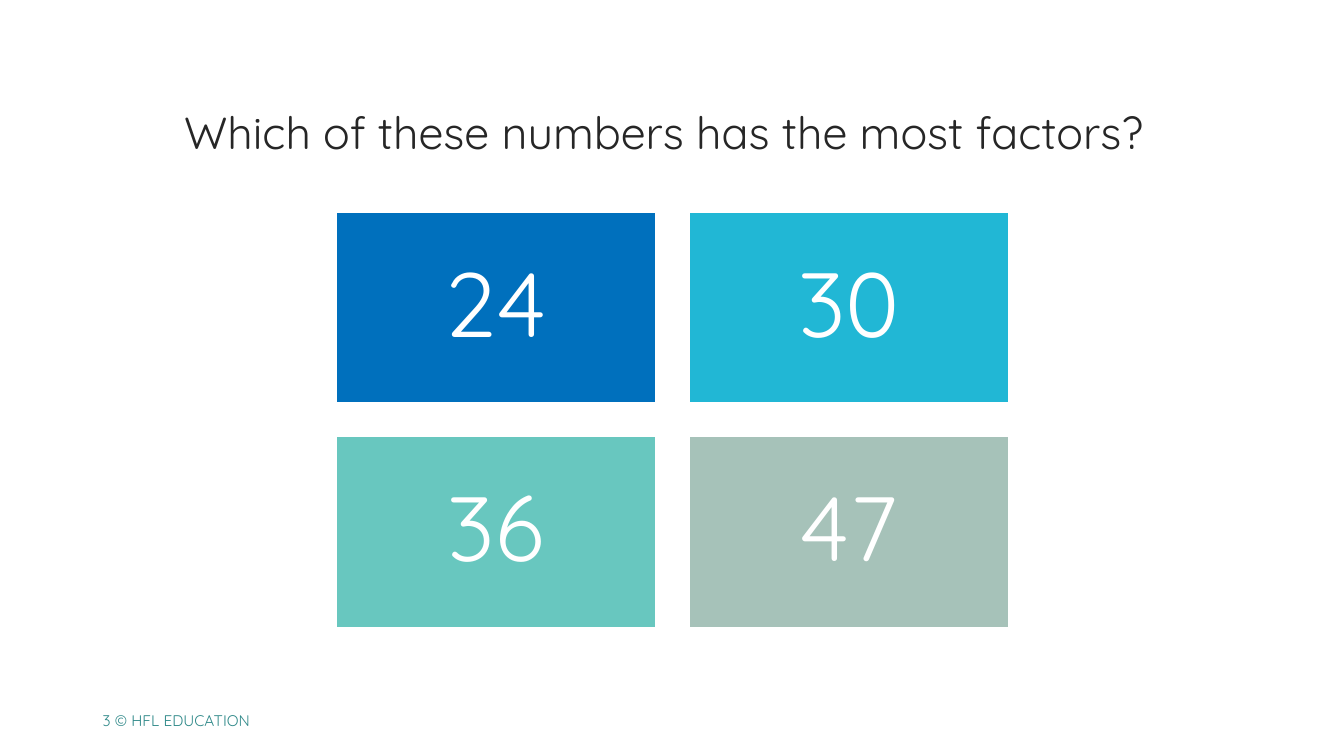
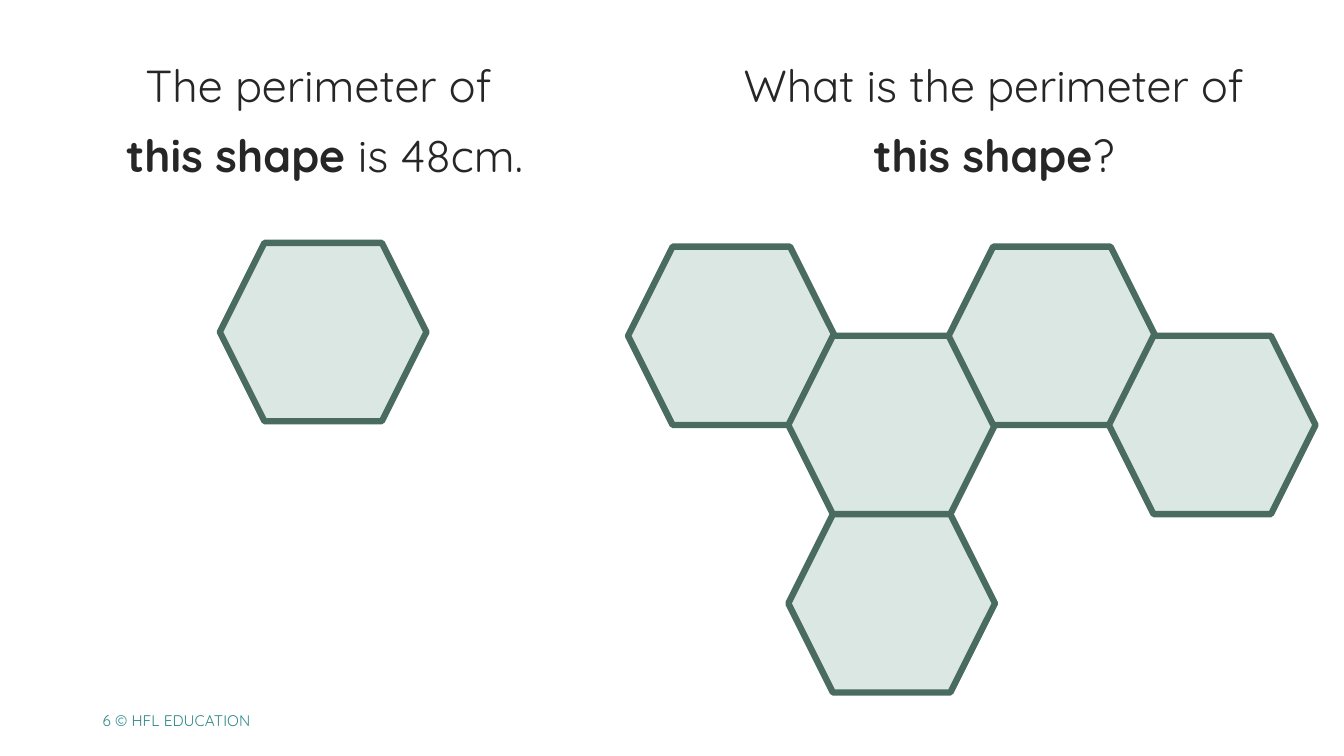
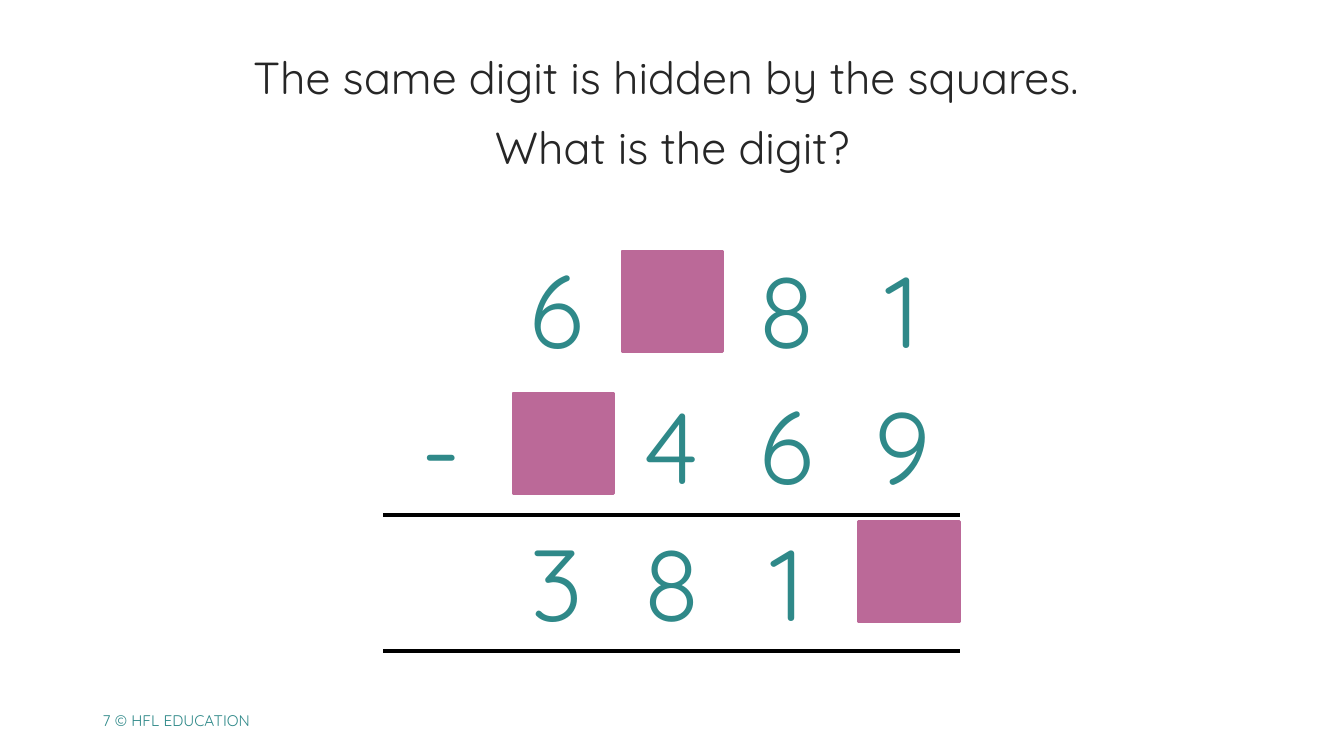
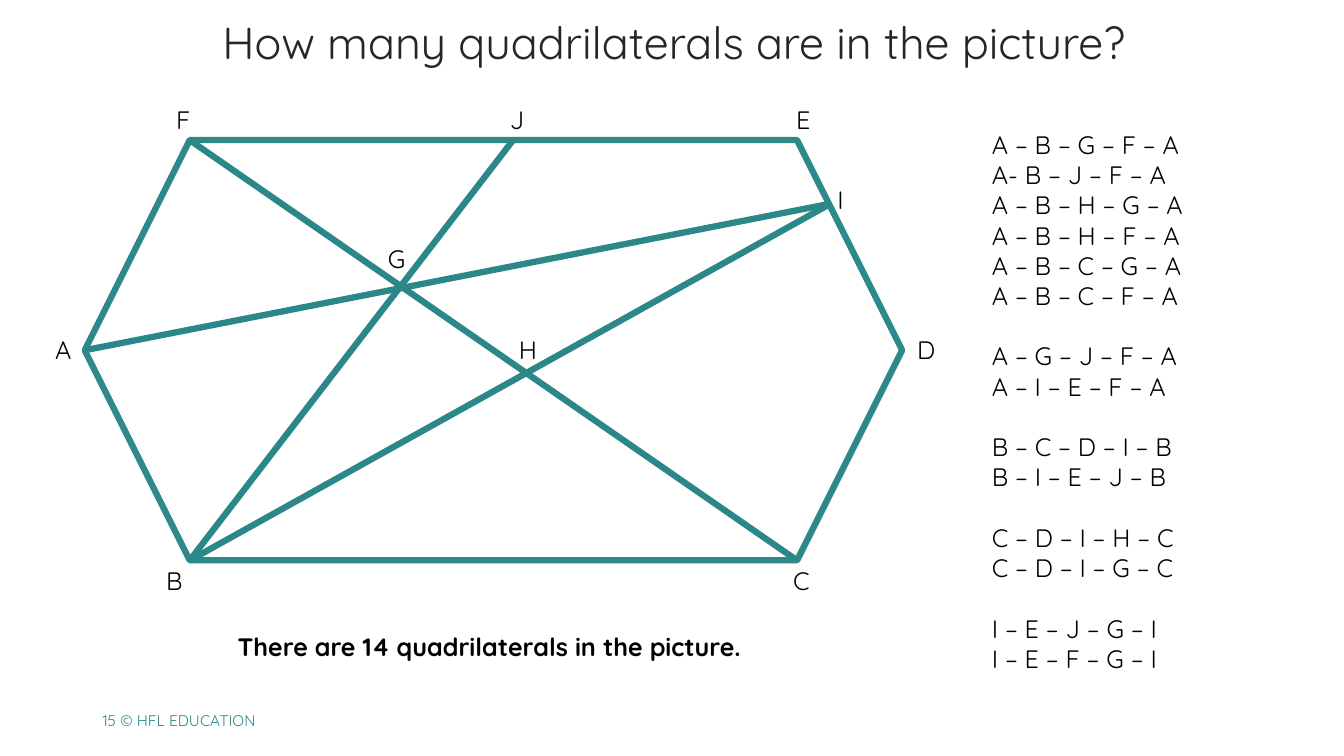
from lxml import etree
from pptx import Presentation
from pptx.dml.color import RGBColor
from pptx.enum.shapes import MSO_CONNECTOR, MSO_SHAPE
from pptx.enum.text import MSO_ANCHOR, MSO_AUTO_SIZE, PP_ALIGN
from pptx.oxml.ns import qn
from pptx.util import Pt

HEXAGON = MSO_SHAPE.HEXAGON
RECTANGLE = MSO_SHAPE.RECTANGLE
STRAIGHT = MSO_CONNECTOR.STRAIGHT
TOP = MSO_ANCHOR.TOP
MIDDLE = MSO_ANCHOR.MIDDLE
NO_AUTOFIT = MSO_AUTO_SIZE.NONE
LEFT = PP_ALIGN.LEFT
CENTER = PP_ALIGN.CENTER

FONT = "Quicksand"
COLORS = {
    "heading": "262626",
    "teal": "2F8989",
    "chord": "2C8888",
    "black": "000000",
    "white": "FFFFFF",
    "blue": "0070BD",
    "cyan": "21B7D5",
    "mint": "68C7BF",
    "sage": "A6C2B9",
    "tile": "DBE7E3",
    "tile_edge": "496B60",
    "cover": "BB6998",
}
TITLE_ONLY, TITLE_AND_BODY = 5, 1


def color(name):
    return RGBColor.from_string(COLORS[name])


def points(*values):
    return [Pt(value) for value in values]


# Shared text and shape helpers

def add_run(paragraph, text, size, color_name, bold=False):
    run = paragraph.add_run()
    run.text = text
    run.font.name = FONT
    run.font.size = Pt(size)
    run.font.bold = bold
    run.font.color.rgb = color(color_name)


def write_lines(frame, lines, size, color_name, align=LEFT, after=0, anchor=TOP):
    """Each line is a list of (text, bold) runs."""
    frame.word_wrap = True
    frame.auto_size = NO_AUTOFIT
    frame.vertical_anchor = anchor
    for index, line in enumerate(lines):
        paragraph = frame.add_paragraph() if index else frame.paragraphs[0]
        paragraph.alignment = align
        paragraph.space_before = Pt(0)
        paragraph.space_after = Pt(after)
        for text, bold in line:
            add_run(paragraph, text, size, color_name, bold)


def add_text(slide, box, text, size, color_name, bold=False, anchor=TOP):
    shape = slide.shapes.add_textbox(*points(*box))
    write_lines(shape.text_frame, [[(text, bold)]], size, color_name, anchor=anchor)


def place(shape, box):
    shape.left, shape.top, shape.width, shape.height = points(*box)


def remove_bullets(frame):
    for paragraph in frame.paragraphs:
        properties = paragraph._p.get_or_add_pPr()
        properties.set("marL", "0")
        properties.set("indent", "0")
        etree.SubElement(properties, qn("a:buNone"))


def fill_heading(placeholder, box, lines):
    place(placeholder, box)
    write_lines(placeholder.text_frame, lines, 32, "heading", CENTER, after=12)


def add_box(slide, kind, box, fill, line, width):
    shape = slide.shapes.add_shape(kind, *points(*box))
    shape.shadow.inherit = False
    if fill:
        shape.fill.solid()
        shape.fill.fore_color.rgb = color(fill)
    else:
        shape.fill.background()
    shape.line.color.rgb = color(line)
    shape.line.width = Pt(width)
    return shape


def add_line(slide, start, end, color_name, width):
    connector = slide.shapes.add_connector(STRAIGHT, *points(*start, *end))
    connector.line.color.rgb = color(color_name)
    connector.line.width = Pt(width)
    etree.SubElement(connector._element.spPr, qn("a:effectLst"))


def new_slide(presentation, number, layout, heading_box, heading):
    slide = presentation.slides.add_slide(presentation.slide_layouts[layout])
    fill_heading(slide.shapes.title, heading_box, heading)
    add_text(slide, (66.2, 500.4, 198, 28.8), f"{number} © HFL EDUCATION",
             11, "teal", anchor=MIDDLE)
    return slide


# Number cards

def add_cards(slide, box, cards, gap=23):
    left, top, width, height = box
    card_width, card_height = (width - gap) / 2, (height - gap) / 2
    for index, (text, fill) in enumerate(cards):
        row, column = divmod(index, 2)
        card = add_box(slide, RECTANGLE,
                       (left + column * (card_width + gap),
                        top + row * (card_height + gap), card_width, card_height),
                       fill, "white", 2)
        write_lines(card.text_frame, [[(text, False)]], 65, "white", CENTER, anchor=MIDDLE)
        card.text_frame.paragraphs[0].line_spacing = 0.9


def factors_slide(presentation):
    slide = new_slide(presentation, 3, TITLE_ONLY, (26.6, 71.3, 895.7, 60),
                      [[("Which of these numbers has the most factors?", False)]])
    add_cards(slide, (239.8, 151.2, 481, 297.4),
              [("24", "blue"), ("30", "cyan"), ("36", "mint"), ("47", "sage")])


# Hexagon tiles

def add_tiles(slide, left, top, cells):
    """Cells are (column, half row) steps on a hexagon grid."""
    column_step, half_row = 114.5, 63.7
    for column, half in cells:
        add_box(slide, HEXAGON,
                (left + column * column_step, top + half * half_row, 147.6, 127.4),
                "tile", "tile_edge", 4.5)


def perimeter_slide(presentation):
    slide = new_slide(presentation, 6, TITLE_AND_BODY, (63.4, 37.4, 337, 118.8),
                      [[("The perimeter of ", False)],
                       [("this shape ", True), ("is 48cm.", False)]])
    question = slide.placeholders[1]
    fill_heading(question, (522.7, 37.4, 374.4, 118.8),
                 [[("What is the perimeter of ", False)],
                  [("this shape", True), ("?", False)]])
    remove_bullets(question.text_frame)
    add_tiles(slide, 157, 173.5, [(0, 0)])
    add_tiles(slide, 448.6, 176.2, [(0, 0), (1, 1), (1, 3), (2, 0), (3, 1)])


# Column subtraction

def add_border(cell, side):
    properties = cell._tc.get_or_add_tcPr()
    border = etree.Element(qn(f"a:{side}"), w=str(Pt(3)))
    fill = etree.SubElement(border, qn("a:solidFill"))
    etree.SubElement(fill, qn("a:srgbClr"), val=COLORS["black"])
    # Borders come before the fill, in the order lnT, lnB
    properties.insert(len(properties.findall(qn("a:lnT"))), border)


def add_subtraction(slide, box, rows):
    frame = slide.shapes.add_table(len(rows), len(rows[0]), *points(*box))
    table = frame.table
    table.first_row = False
    table.horz_banding = False
    for row_index, row in enumerate(rows):
        for column_index, digit in enumerate(row):
            cell = table.cell(row_index, column_index)
            cell.fill.background()
            cell.vertical_anchor = MIDDLE
            if digit.strip():
                paragraph = cell.text_frame.paragraphs[0]
                paragraph.alignment = CENTER
                add_run(paragraph, digit, 72, "teal")
            if row_index == 2:
                add_border(cell, "lnT")
            if row_index >= 1:
                add_border(cell, "lnB")


def hidden_digit_slide(presentation):
    slide = new_slide(presentation, 7, TITLE_ONLY, (126, 31.7, 708.5, 118.8),
                      [[("The same digit is hidden by the squares. ", False)],
                       [("What is the digit?", False)]])
    left, top = 274.3, 173.5
    add_subtraction(slide, (left, top, 411.1, 286.6), [" 6 81", "- 469", " 381 "])
    for across, down in [(170, 5.8), (339, 198.8), (92.2, 107.3)]:
        add_box(slide, RECTANGLE, (left + across, top + down, 72, 72), "cover", "cover", 2)


# Hexagon with chords and lettered points

def add_figure(slide, box):
    left, top, width, height = box
    inset = height / 4
    add_box(slide, HEXAGON, box, None, "teal", 4.5)
    corners = {
        "A": (0, height / 2), "B": (inset, height), "C": (width - inset, height),
        "F": (inset, 0), "I": (532.8, 45.4), "J": (306, 0),
    }
    spots = {name: (left + x, top + y) for name, (x, y) in corners.items()}
    for start, end in ["FC", "BJ", "AI", "BI"]:
        add_line(slide, spots[start], spots[end], "chord", 4.5)
    above, level, below = -29.5, 135.4, height
    labels = {
        "A": (-28.1, level), "B": (51.1, below), "C": (499, below),
        "D": (587.5, level), "E": (501.1, above), "F": (58.3, above),
        "G": (209.5, 69.8), "H": (303.1, level), "I": (530.6, 28.1),
        "J": (296.6, above),
    }
    for name, (x, y) in labels.items():
        add_text(slide, (left + x, top + y, 30, 29), name, 18, "black")


def fill_path_list(placeholder, box, groups):
    place(placeholder, box)
    frame = placeholder.text_frame
    write_lines(frame, [[(text, False)] for group in groups for text in group], 18, "black")
    remove_bullets(frame)
    first = 0
    for group in groups[:-1]:
        first += len(group)
        frame.paragraphs[first].space_before = Pt(21.6)


def quadrilaterals_slide(presentation):
    slide = new_slide(presentation, 15, TITLE_AND_BODY, (127.4, 7.2, 708.5, 46),
                      [[("How many quadrilaterals are in the picture?", False)]])
    add_text(slide, (162.7, 447.1, 480, 29),
             "There are 14 quadrilaterals in the picture.", 18, "black", bold=True)
    add_figure(slide, (60.5, 100.1, 583.9, 300.2))
    fill_path_list(slide.placeholders[1], (701.3, 88.6, 165, 422), [
        ["A – B – G – F – A", "A- B – J – F – A", "A – B – H – G – A",
         "A – B – H – F – A", "A – B – C – G – A", "A – B – C – F – A"],
        ["A – G – J – F – A", "A – I – E – F – A"],
        ["B – C – D – I – B", "B – I – E – J – B"],
        ["C – D – I – H – C", "C – D – I – G – C"],
        ["I – E – J – G – I", "I – E – F – G – I"],
    ])


def main():
    presentation = Presentation()
    presentation.slide_width, presentation.slide_height = points(960, 540)
    factors_slide(presentation)
    perimeter_slide(presentation)
    hidden_digit_slide(presentation)
    quadrilaterals_slide(presentation)
    presentation.save("out.pptx")


if __name__ == "__main__":
    main()
